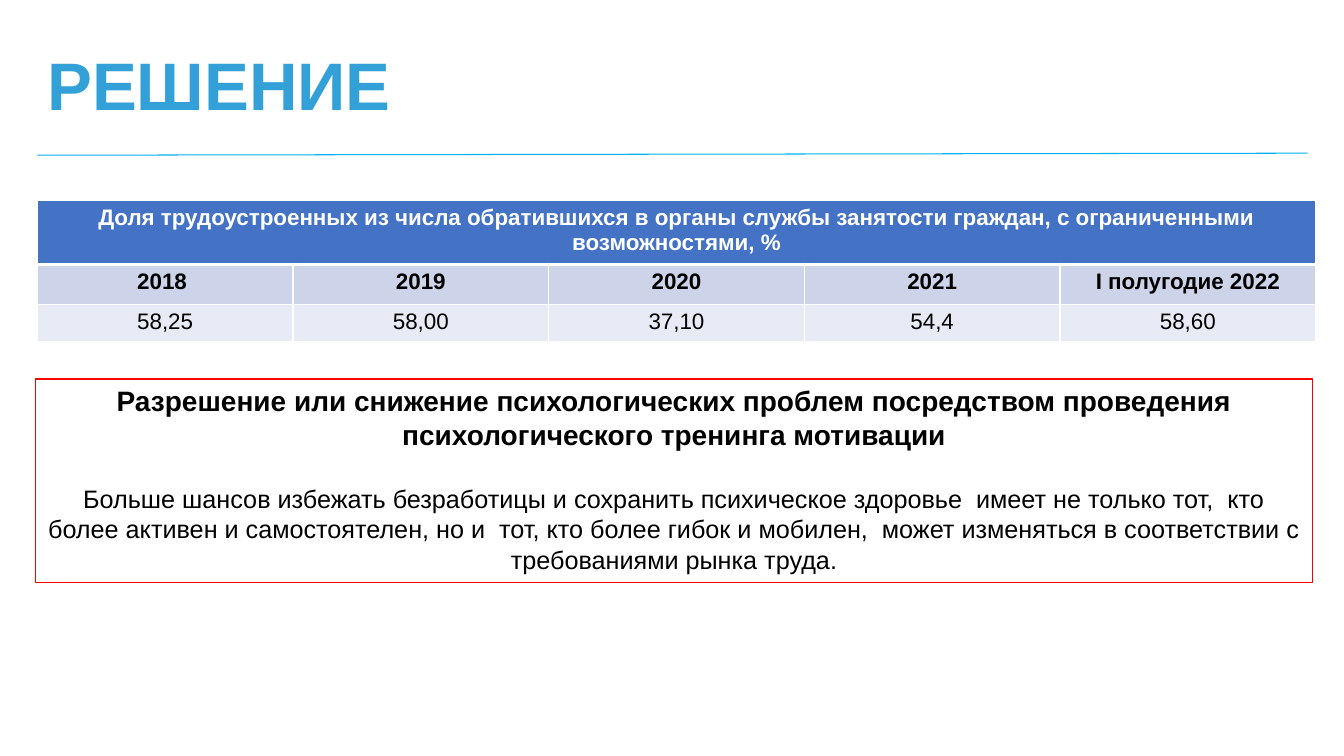
import pptx
import pptx.util
import pptx.dml.color
import pptx.enum.shapes
import pptx.enum.text
import pptx.oxml.ns
import lxml.etree

# Content
HEADING = "РЕШЕНИЕ"
TABLE_CAPTION = ("Доля трудоустроенных из числа обратившихся в органы службы занятости "
                 "граждан, с ограниченными возможностями, %")
SHARES = [
    ("2018 ", "58,25"),
    ("2019", "58,00"),
    ("2020", "37,10"),
    ("2021", "54,4"),
    ("I полугодие 2022", "58,60"),
]
# text, size, bold, space before
CONCLUSION = [
    ("Разрешение или снижение психологических проблем посредством проведения "
     "психологического тренинга мотивации", 20, True, 0),
    ("Больше шансов избежать безработицы и сохранить психическое здоровье  имеет "
     "не только тот,  кто более активен и самостоятелен, но и  тот, кто более гибок "
     "и мобилен,  может изменяться в соответствии с требованиями рынка труда.",
     18, False, 23),
]
# height, fill, font colour, bold, width of the border below
ROW_STYLES = [
    (63, "4472C4", "FFFFFF", True, 3),
    (40, "CDD4EA", "000000", True, 1),
    (37, "E8EBF5", "000000", False, 1),
]

EMU_PER_PX = 9144  # 100 px to the inch
CENTER = pptx.enum.text.PP_ALIGN.CENTER


def px(*lengths):
    return [pptx.util.Emu(length * EMU_PER_PX) for length in lengths]


def color(hex_code):
    return pptx.dml.color.RGBColor.from_string(hex_code)


def format_text(paragraph, size, bold, hex_code, align):
    paragraph.alignment = align
    for run in paragraph.runs:
        run.font.name = "Arial"
        run.font.size = pptx.util.Pt(size)
        run.font.bold = bold
        run.font.color.rgb = color(hex_code)


def set_borders(cell, bottom_width):
    properties = cell._tc.get_or_add_tcPr()
    qn = pptx.oxml.ns.qn
    for side, width in (("L", 1), ("R", 1), ("T", 1), ("B", bottom_width)):
        border = lxml.etree.SubElement(properties, qn("a:ln" + side),
                                       w=str(pptx.util.Pt(width)))
        fill = lxml.etree.SubElement(border, qn("a:solidFill"))
        lxml.etree.SubElement(fill, qn("a:srgbClr"), val="FFFFFF")


presentation = pptx.Presentation()
presentation.slide_width, presentation.slide_height = px(1333, 750)
slide = presentation.slides.add_slide(presentation.slide_layouts[5])

# Heading
heading = slide.shapes.title
heading.left, heading.top, heading.width, heading.height = px(37, 49, 1110, 79)
heading.text_frame.text = HEADING
heading.text_frame.auto_size = pptx.enum.text.MSO_AUTO_SIZE.NONE
heading.text_frame.vertical_anchor = pptx.enum.text.MSO_ANCHOR.BOTTOM
format_text(heading.text_frame.paragraphs[0], 48, True, "33A1D8",
            pptx.enum.text.PP_ALIGN.LEFT)

# Rule under the heading
rule = slide.shapes.add_connector(pptx.enum.shapes.MSO_CONNECTOR.STRAIGHT,
                                  *px(37, 154, 1297, 152))
rule.line.color.rgb = color("00B0F0")
rule.line.width = pptx.util.Pt(0.75)
lxml.etree.SubElement(rule._element.spPr, pptx.oxml.ns.qn("a:effectLst"))

# Conclusion box
conclusion = slide.shapes.add_textbox(*px(35, 376, 1267, 202))
conclusion.line.color.rgb = color("FF0000")
conclusion.line.width = pptx.util.Pt(0.75)
frame = conclusion.text_frame
frame.word_wrap = True
frame.text = "\n".join(text for text, *_ in CONCLUSION)
for paragraph, (_, size, bold, gap) in zip(frame.paragraphs, CONCLUSION):
    format_text(paragraph, size, bold, "000000", CENTER)
    paragraph.space_before = pptx.util.Pt(gap)

# Table of shares
table_height = sum(style[0] for style in ROW_STYLES)
shares = slide.shapes.add_table(len(ROW_STYLES), len(SHARES),
                                *px(37, 199, 1268, table_height)).table
shares.cell(0, 0).merge(shares.cell(0, len(SHARES) - 1))
cell_texts = [[TABLE_CAPTION] + [""] * (len(SHARES) - 1), *zip(*SHARES)]
for row, texts, style in zip(shares.rows, cell_texts, ROW_STYLES):
    height, fill, font_color, bold, bottom_width = style
    row.height = px(height)[0]
    for cell, text in zip(row.cells, texts):
        set_borders(cell, bottom_width)
        cell.fill.solid()
        cell.fill.fore_color.rgb = color(fill)
        cell.text_frame.text = text
        format_text(cell.text_frame.paragraphs[0], 16, bold, font_color, CENTER)

presentation.save("out.pptx")
